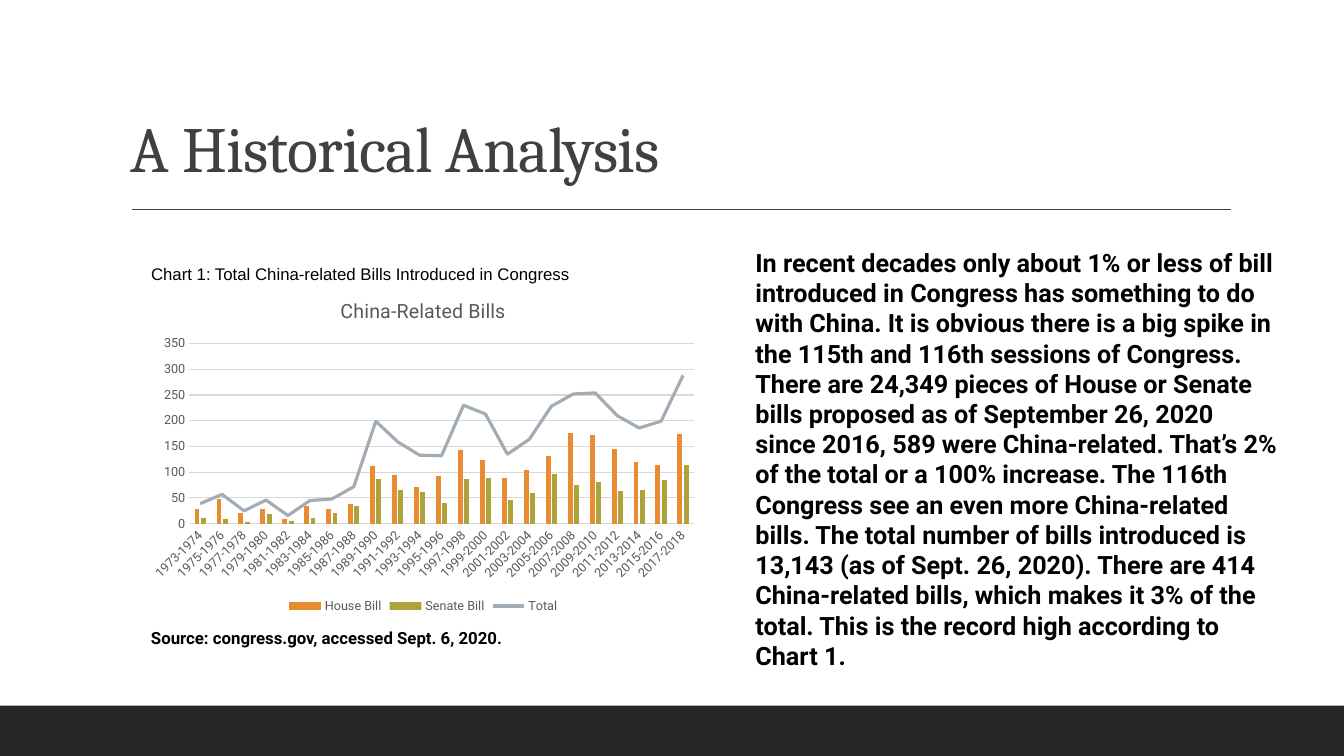
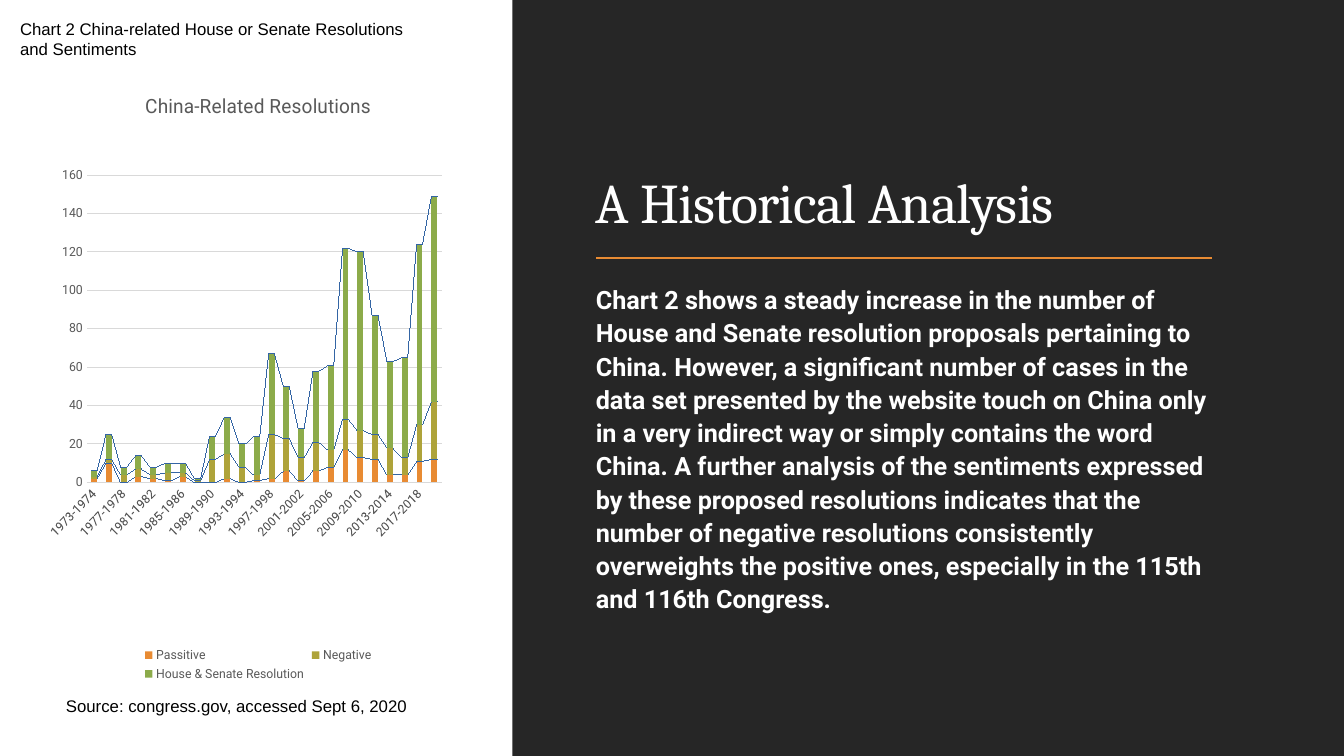
from lxml import etree
from pptx import Presentation
from pptx.chart.data import CategoryChartData
from pptx.dml.color import RGBColor
from pptx.enum.chart import XL_CHART_TYPE, XL_LEGEND_POSITION, XL_MARKER_STYLE, XL_TICK_MARK
from pptx.enum.shapes import MSO_CONNECTOR, MSO_SHAPE
from pptx.enum.text import MSO_ANCHOR
from pptx.oxml.ns import qn
from pptx.util import Pt

CLUSTERED = XL_CHART_TYPE.COLUMN_CLUSTERED
STACKED = XL_CHART_TYPE.COLUMN_STACKED
BOTTOM_LEGEND = XL_LEGEND_POSITION.BOTTOM
NO_MARKER = XL_MARKER_STYLE.NONE
NO_TICK = XL_TICK_MARK.NONE
STRAIGHT = MSO_CONNECTOR.STRAIGHT
RECTANGLE = MSO_SHAPE.RECTANGLE
TOP, BOTTOM = MSO_ANCHOR.TOP, MSO_ANCHOR.BOTTOM

BLACK = RGBColor(0x00, 0x00, 0x00)
WHITE = RGBColor(0xFF, 0xFF, 0xFF)
DARK = RGBColor(0x26, 0x26, 0x26)
SLATE = RGBColor(0x40, 0x40, 0x40)
GRAY = RGBColor(0x59, 0x59, 0x59)
GRID = RGBColor(0xD9, 0xD9, 0xD9)
ORANGE = RGBColor(0xE8, 0x8B, 0x33)
OLIVE = RGBColor(0xAE, 0xA3, 0x3A)
GREEN = RGBColor(0x8C, 0xAB, 0x4A)
STEEL = RGBColor(0xA2, 0xAC, 0xB5)

TITLE_FONT, BODY_FONT, CAPTION_FONT = "Cambria", "Roboto", "Arial"
TITLE = "A Historical Analysis"
WIDTH, HEIGHT = 960, 540

BILLS_TEXT = (
    "In recent decades only about 1% or less of bill introduced in Congress has something to do "
    "with China. It is obvious there is a big spike in the 115th and 116th sessions of Congress. "
    "There are 24,349 pieces of House or Senate bills proposed as of September 26, 2020 since 2016, "
    "589 were China-related. That’s 2% of the total or a 100% increase. The 116th Congress see an "
    "even more China-related bills. The total number of bills introduced is 13,143 (as of Sept. 26, "
    "2020). There are 414 China-related bills, which makes it 3% of the total. This is the record "
    "high according to Chart 1."
)
RESOLUTIONS_TEXT = (
    "Chart 2 shows a steady increase in the number of House and Senate resolution proposals "
    "pertaining to China. However, a significant number of cases in the data set presented by the "
    "website touch on China only in a very indirect way or simply contains the word China. A further "
    "analysis of the sentiments expressed by these proposed resolutions indicates that the number of "
    "negative resolutions consistently overweights the positive ones, especially in the 115th and "
    "116th Congress."
)

SESSIONS = [f"{year}-{year + 1}" for year in range(1973, 2020, 2)]
BILLS = {
    "House Bill": (28, 48, 21, 28, 10, 34, 28, 38, 113, 94, 72, 92, 143, 124, 88, 104, 132, 176,
                   173, 146, 120, 114, 174),
    "Senate Bill": (11, 9, 4, 18, 6, 11, 20, 34, 86, 65, 61, 40, 87, 89, 47, 60, 96, 76, 81, 64,
                    66, 85, 114),
    "Total": (39, 57, 25, 46, 16, 45, 48, 72, 199, 159, 133, 132, 230, 213, 135, 164, 228, 252,
              254, 210, 186, 199, 288),
}
RESOLUTIONS = {
    "Passitive": (2, 10, 0, 3, 2, 1, 3, 0, 0, 2, 0, 1, 2, 6, 1, 6, 8, 17, 13, 12, 4, 4, 11, 12),
    "Negative": (1, 2, 4, 4, 2, 4, 2, 1, 12, 13, 8, 3, 23, 17, 12, 15, 9, 16, 14, 13, 14, 9, 19,
                 30),
    "House & Senate Resolution": (3, 13, 4, 7, 4, 5, 5, 1, 12, 19, 12, 20, 42, 27, 15, 37, 44, 89,
                                  93, 62, 45, 52, 94, 107),
}


class SlideWriter:
    """Holds the deck, its style and the current page."""

    def __init__(self):
        self.deck = Presentation()
        self.deck.slide_width, self.deck.slide_height = Pt(WIDTH), Pt(HEIGHT)
        self.page = None

    def new_page(self):
        self.page = self.deck.slides.add_slide(self.deck.slide_layouts[6])

    def band(self, left, top, width, height):
        box = self.page.shapes.add_shape(RECTANGLE, Pt(left), Pt(top), Pt(width), Pt(height))
        box.shadow.inherit = False
        box.fill.solid()
        box.fill.fore_color.rgb = DARK
        box.line.fill.background()

    def rule(self, left, right, y, color, weight):
        line = self.page.shapes.add_connector(STRAIGHT, Pt(left), Pt(y), Pt(right), Pt(y))
        line.line.color.rgb = color
        line.line.width = Pt(weight)
        etree.SubElement(line._element.spPr, qn("a:effectLst"))

    def style(self, font, size, color, name=BODY_FONT, bold=False):
        font.name, font.size, font.bold = name, Pt(size), bold
        font.color.rgb = color

    def text(self, words, left, top, width, height, size, color=BLACK, name=BODY_FONT,
             bold=False, anchor=TOP, spacing=1.0):
        box = self.page.shapes.add_textbox(Pt(left), Pt(top), Pt(width), Pt(height))
        frame = box.text_frame
        frame.word_wrap = True
        frame.vertical_anchor = anchor
        para = frame.paragraphs[0]
        para.text = words
        para.line_spacing = spacing
        self.style(para.font, size, color, name, bold)
        return box

    def title(self, left, top, width, height, size, color):
        box = self.text(TITLE, left, top, width, height, size, color, TITLE_FONT,
                        anchor=BOTTOM, spacing=0.9)
        span = box.text_frame.paragraphs[0].runs[0]
        span._r.get_or_add_rPr().set("spc", "-50")

    def caption(self, words, left, top, width, height, name=CAPTION_FONT, bold=False):
        self.text(words, left, top, width, height, 12, name=name, bold=bold)

    def chart(self, kind, title, table, colors, left, top, width, height, gap, overlap):
        data = CategoryChartData()
        data.categories = SESSIONS[:len(next(iter(table.values())))]
        for name, values in table.items():
            data.add_series(name, values)
        chart = self.page.shapes.add_chart(
            kind, Pt(left), Pt(top), Pt(width), Pt(height), data).chart
        self.style(chart.font, 10, BLACK)
        chart.has_title = True
        heading = chart.chart_title.text_frame
        heading.text = title
        self.style(heading.paragraphs[0].font, 14, GRAY)
        chart.has_legend = True
        chart.legend.position = BOTTOM_LEGEND
        chart.legend.include_in_layout = False
        self.style(chart.legend.font, 9, GRAY)
        for axis in (chart.category_axis, chart.value_axis):
            axis.major_tick_mark = axis.minor_tick_mark = NO_TICK
            self.style(axis.tick_labels.font, 9, GRAY)
        chart.value_axis.format.line.fill.background()
        for line in (chart.category_axis.format.line,
                     chart.value_axis.major_gridlines.format.line):
            line.color.rgb = GRID
            line.width = Pt(0.75)
        labels = chart.category_axis._element.find(qn("c:txPr"))
        labels.find(qn("a:bodyPr")).set("rot", "-2700000")
        plot = chart.plots[0]
        plot.gap_width, plot.overlap, plot.vary_by_categories = gap, overlap, False
        for series, color in zip(plot.series, colors):
            series.format.fill.solid()
            series.format.fill.fore_color.rgb = color
        return chart

    def last_series_as_line(self, chart, color):
        bars = chart.plots[0]._element
        series = bars.findall(qn("c:ser"))[-1]
        for tag in ("c:spPr", "c:invertIfNegative"):
            for part in series.findall(qn(tag)):
                series.remove(part)
        lines = bars.makeelement(qn("c:lineChart"))
        bars.addnext(lines)
        etree.SubElement(lines, qn("c:grouping"), val="standard")
        etree.SubElement(lines, qn("c:varyColors"), val="0")
        lines.append(series)
        etree.SubElement(lines, qn("c:marker"), val="1")
        for axis in bars.findall(qn("c:axId")):
            etree.SubElement(lines, qn("c:axId"), val=axis.get("val"))
        total = chart.plots[1].series[0]
        total.smooth = False
        total.marker.style = NO_MARKER
        total.format.line.color.rgb = color
        total.format.line.width = Pt(2.25)

    def series_lines(self, chart):
        bars = chart.plots[0]._element
        bars.find(qn("c:axId")).addprevious(bars.makeelement(qn("c:serLines")))

    def plot_area(self, chart, x, y, w, h):
        area = chart.plots[0]._element.getparent()
        for old in area.findall(qn("c:layout")):
            area.remove(old)
        layout = area.makeelement(qn("c:layout"))
        area.insert(0, layout)
        manual = etree.SubElement(layout, qn("c:manualLayout"))
        settings = {"layoutTarget": "inner", "xMode": "edge", "yMode": "edge",
                    "x": x, "y": y, "w": w, "h": h}
        for key, value in settings.items():
            etree.SubElement(manual, qn(f"c:{key}"), val=str(value))


def bills_page(writer):
    """Bills per session with the reading beside the chart."""
    writer.new_page()
    writer.band(0, 504, WIDTH, 36)
    writer.rule(94.5, 879, 149.5, SLATE, 1)
    writer.title(86.4, 22.4, 792, 114.4, 46, SLATE)
    writer.caption("Chart 1: Total China-related Bills Introduced in Congress",
                   100.8, 184.5, 403, 22)
    chart = writer.chart(CLUSTERED, "China-Related Bills", BILLS, (ORANGE, OLIVE, STEEL),
                         100.8, 201, 403, 240, 219, -27)
    writer.last_series_as_line(chart, STEEL)
    writer.caption("Source: congress.gov, accessed Sept. 6, 2020.", 100.8, 445, 321, 22,
                   BODY_FONT, True)
    writer.text(BILLS_TEXT, 532.5, 173, 389, 291, 18, bold=True)


def resolutions_page(writer):
    """Resolutions per session beside a dark reading panel."""
    writer.new_page()
    writer.band(366, 0, WIDTH - 366, HEIGHT)
    writer.title(418.5, 41, 455, 131, 40, WHITE)
    writer.rule(426, 865.5, 184.5, ORANGE, 1.5)
    writer.text(RESOLUTIONS_TEXT, 418.5, 197.5, 460, 266, 18, WHITE, bold=True, spacing=1.1)
    writer.caption("Chart 2 China-related House or Senate Resolutions and Sentiments",
                   7.2, 9.5, 309, 36)
    writer.caption("Source: congress.gov, accessed Sept 6, 2020", 40, 493.5, 287, 22)
    chart = writer.chart(STACKED, "China-Related Resolutions", RESOLUTIONS,
                         (ORANGE, OLIVE, GREEN), 34, 50.5, 293, 439, 150, 100)
    writer.series_lines(chart)
    writer.plot_area(chart, 0.07, 0.17, 0.89, 0.5)


def main():
    """Build both pages and save the deck."""
    writer = SlideWriter()
    bills_page(writer)
    resolutions_page(writer)
    writer.deck.save("out.pptx")


if __name__ == "__main__":
    main()
